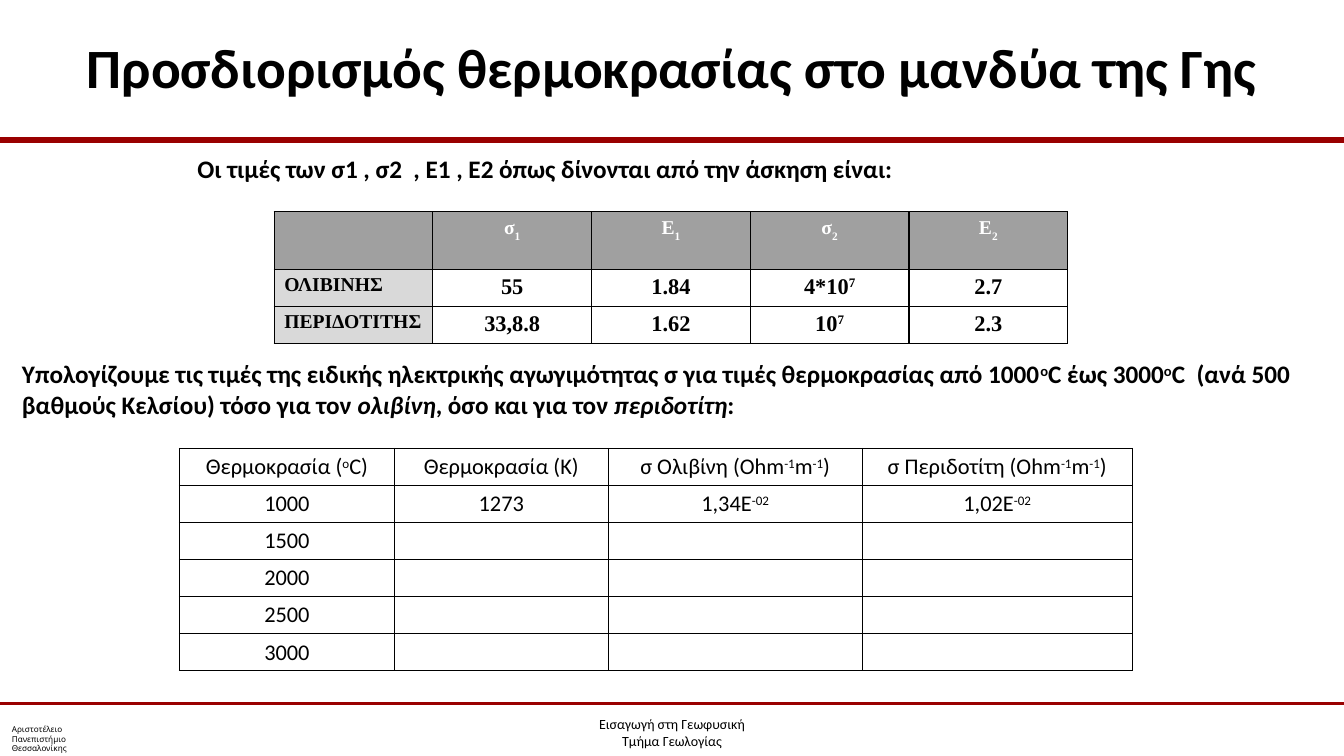
"""Builds the slide on finding the temperature of the Earth's mantle."""
from dataclasses import dataclass

from lxml import etree
from pptx import Presentation
from pptx.dml.color import RGBColor
from pptx.enum.shapes import MSO_CONNECTOR
from pptx.enum.text import MSO_ANCHOR, PP_ALIGN
from pptx.oxml.ns import qn
from pptx.util import Inches, Pt

STRAIGHT = MSO_CONNECTOR.STRAIGHT
TOP, MIDDLE, BOTTOM = MSO_ANCHOR.TOP, MSO_ANCHOR.MIDDLE, MSO_ANCHOR.BOTTOM
LEFT, CENTER, JUSTIFY = PP_ALIGN.LEFT, PP_ALIGN.CENTER, PP_ALIGN.JUSTIFY
BASELINES = {"^": "30000", "_": "-30000"}
ITALIC = "~"


@dataclass(frozen=True)
class Theme:
    ink: str = "000000"
    paper: str = "FFFFFF"
    rule: str = "990000"
    heading_fill: str = "A0A0A0"
    label_fill: str = "D9D9D9"
    sans: str = "Calibri"
    serif: str = "Times New Roman"
    seal: str = "League Spartan"
    title: float = 39.6
    body: float = 18
    value: float = 16
    label: float = 14
    footer: float = 10
    small: float = 5.8


def write(paragraph, text, *, size, font, color, bold=False, align=LEFT, spacing=None):
    """Write marked text: | splits spans, ^ raises, _ lowers, ~ slants."""
    paragraph.alignment = align
    if spacing:
        paragraph.line_spacing = spacing
    if not text:
        etree.SubElement(paragraph._p, qn("a:endParaRPr"), sz=str(int(size * 100)))
        return
    for part in text.split("|"):
        mark = part[0] if part[0] in "^_~" else ""
        span = paragraph.add_run()
        span.text = part[len(mark):]
        span.font.size = Pt(size)
        span.font.name = font
        span.font.bold = bold
        span.font.italic = mark == ITALIC
        span.font.color.rgb = RGBColor.from_string(color)
        if mark in BASELINES:
            span.font._element.set("baseline", BASELINES[mark])


class Page:
    """One slide on a grid of 100 columns by 100 rows."""

    def __init__(self, deck, theme):
        self.theme = theme
        self.column = deck.slide_width / 100
        self.row = deck.slide_height / 100
        self.shapes = deck.slides.add_slide(deck.slide_layouts[6]).shapes

    def place(self, left, top, width, height):
        return (round(left * self.column), round(top * self.row),
                round(width * self.column), round(height * self.row))

    def rule(self, top, weight):
        left, height, right, _ = self.place(0, top, 100, 0)
        line = self.shapes.add_connector(STRAIGHT, left, height, right, height)
        line.line.color.rgb = RGBColor.from_string(self.theme.rule)
        line.line.width = Pt(weight)
        etree.SubElement(line._element.spPr, qn("a:effectLst"))

    def text(self, area, *lines, anchor=TOP, inset=0.05, first_spacing=None, **style):
        frame = self.shapes.add_textbox(*self.place(*area)).text_frame
        frame.word_wrap = True
        frame.vertical_anchor = anchor
        frame.margin_top = frame.margin_bottom = Inches(inset)
        for index, line in enumerate(lines):
            paragraph = frame.add_paragraph() if index else frame.paragraphs[0]
            write(paragraph, line, color=self.theme.ink,
                  spacing=None if index else first_spacing, **style)

    def table(self, left, top, columns, rows, content, look):
        area = self.place(left, top, sum(columns), sum(rows))
        table = self.shapes.add_table(len(rows), len(columns), *area).table
        table.first_row = table.horz_banding = False
        for column, width in zip(table.columns, columns):
            column.width = round(width * self.column)
        for row_index, line in enumerate(content):
            table.rows[row_index].height = round(rows[row_index] * self.row)
            for column_index, words in enumerate(line):
                cell = table.cell(row_index, column_index)
                fill, anchor, style = look(row_index, column_index)
                self.border(cell)
                if fill:
                    cell.fill.solid()
                    cell.fill.fore_color.rgb = RGBColor.from_string(fill)
                else:
                    cell.fill.background()
                cell.vertical_anchor = anchor
                write(cell.text_frame.paragraphs[0], words, **style)

    def border(self, cell):
        properties = cell._tc.get_or_add_tcPr()
        for side in ("a:lnL", "a:lnR", "a:lnT", "a:lnB"):
            line = etree.SubElement(properties, qn(side), w=str(Pt(1)))
            fill = etree.SubElement(line, qn("a:solidFill"))
            etree.SubElement(fill, qn("a:srgbClr"), val=self.theme.ink)


def main():
    theme = Theme()
    deck = Presentation()
    deck.slide_width, deck.slide_height = Inches(13.33), Inches(7.5)
    page = Page(deck, theme)

    def constants_look(row, column):
        style = {"font": theme.serif, "bold": True, "align": CENTER,
                 "size": theme.value, "color": theme.ink}
        if row == 0:
            return theme.heading_fill, TOP, {**style, "size": theme.label, "color": theme.paper}
        if column == 0:
            return theme.label_fill, TOP, {**style, "size": theme.label, "align": JUSTIFY}
        return theme.paper, TOP, style

    def conductivity_look(row, column):
        style = {"font": theme.sans, "align": CENTER, "size": theme.value, "color": theme.ink}
        return None, BOTTOM if row else TOP, style

    page.rule(18.53, 4)
    page.rule(93.07, 2)
    page.text((0.15, 95.47, 7.88, 4.53), "Αριστοτέλειο", "Πανεπιστήμιο", "Θεσσαλονίκης",
              anchor=MIDDLE, size=theme.small, font=theme.seal)
    page.text((34.25, 92, 31.5, 8), "Εισαγωγή στη Γεωφυσική", "Τμήμα Γεωλογίας",
              inset=0, first_spacing=2.2, align=CENTER, size=theme.footer, font=theme.sans)

    heading = {"font": theme.sans, "bold": True}
    page.text((5, 0.4, 90, 16.67), "Προσδιορισμός θερμοκρασίας στο μανδύα της Γης",
              anchor=MIDDLE, align=CENTER, size=theme.title, **heading)
    page.text((13.95, 19.6, 64.35, 5.33),
              "Οι τιμές των σ1 , σ2  , Ε1 , Ε2 όπως δίνονται από την άσκηση είναι:",
              size=theme.body, **heading)
    page.table(20.4, 28, [11.81] * 5, [7.6, 4.9, 4.9], [
        ["", "σ|_1", "Ε|_1", "σ|_2", "Ε|_2"],
        ["ΟΛΙΒΙΝΗΣ", "55", "1.84", "4*10|^7", "2.7"],
        ["ΠΕΡΙΔΟΤΙΤΗΣ", "33,8.8", "1.62", "10|^7", "2.3"],
    ], constants_look)
    page.text((0.9, 46.8, 98.05, 9.47),
              "Yπολογίζoυμε τις τιμές της ειδικής ηλεκτρικής αγωγιμότητας σ για τιμές "
              "θερμοκρασίας από 1000|^ο|C έως 3000|^ο|C  (ανά 500 βαθμούς Κελσίου) τόσο "
              "για τον |~ολιβίνη|, όσο και για τον |~περιδοτίτη|:",
              size=theme.body, **heading)
    page.table(13.35, 59.33, [16, 15.9, 18.9, 20.1], [4.9] * 6, [
        ["Θερμοκρασία (|^ο|C)", "Θερμοκρασία (Κ)",
         "σ Ολιβίνη (Ohm|^-1|m|^-1|)", "σ Περιδοτίτη (Ohm|^-1|m|^-1|)"],
        ["1000", "1273", "1,34E|^-02", "1,02E|^-02"],
        *([str(celsius), "", "", ""] for celsius in range(1500, 3001, 500)),
    ], conductivity_look)
    deck.save("out.pptx")


if __name__ == "__main__":
    main()
